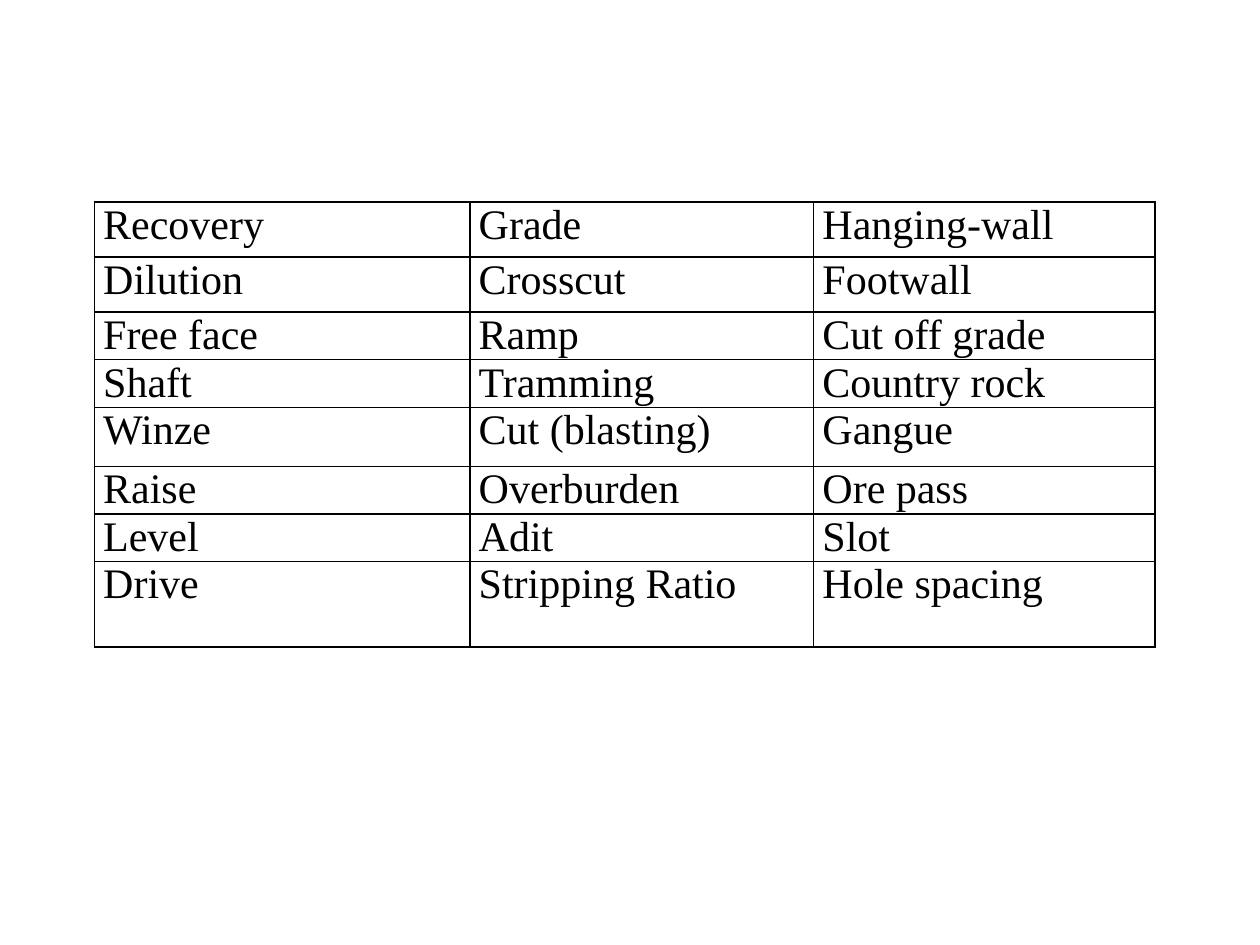
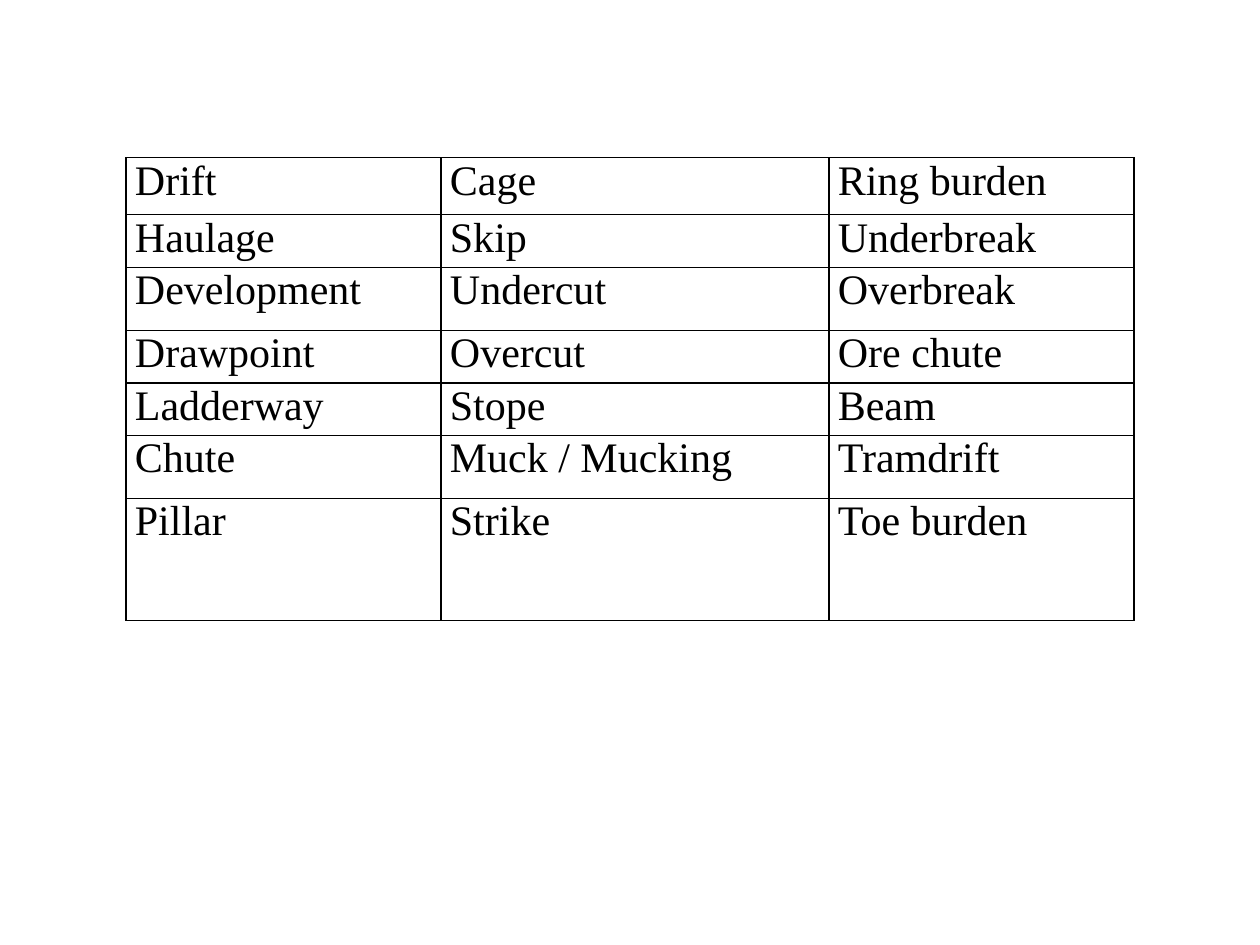
from lxml import etree
from pptx import Presentation
from pptx.dml.color import RGBColor
from pptx.oxml.ns import qn
from pptx.util import Cm, Pt

COLORS = {"ink": "000000", "paper": "FFFFFF"}
FONT = {"name": "Times New Roman", "size": Pt(24), "bold": False}
MARGINS = {"margin_left": Cm(0.18), "margin_right": Cm(0.18),
           "margin_top": 0, "margin_bottom": 0}
BORDER = Pt(1)
BLANK_LAYOUT = 6

MINING_TERMS = {
    "at": (1.9, 4.07),
    "widths": (7.57, 6.93, 6.88),
    "heights": (1.11, 1.11, 0.96, 0.96, 1.19, 0.96, 0.96, 1.72),
    "terms": [
        ("Recovery", "Grade", "Hanging-wall"),
        ("Dilution", "Crosscut", "Footwall"),
        ("Free face", "Ramp", "Cut off grade"),
        ("Shaft", "Tramming", "Country rock"),
        ("Winze", "Cut (blasting)", "Gangue"),
        ("Raise", "Overburden", "Ore pass"),
        ("Level", "Adit", "Slot"),
        ("Drive", "Stripping Ratio", "Hole spacing"),
    ],
}
STOPING_TERMS = {
    "at": (2.54, 3.18),
    "widths": (6.35, 7.82, 6.15),
    "heights": (1.15, 1.06, 1.27, 1.06, 1.06, 1.27, 2.46),
    "terms": [
        ("Drift", "Cage", "Ring burden"),
        ("Haulage", "Skip", "Underbreak"),
        ("Development", "Undercut", "Overbreak"),
        ("Drawpoint", "Overcut", "Ore chute"),
        ("Ladderway", "Stope", "Beam"),
        ("Chute", "Muck / Mucking", "Tramdrift"),
        ("Pillar", "Strike", "Toe burden"),
    ],
}


def set_attrs(obj, values):
    for name, value in values.items():
        setattr(obj, name, value)


def add_borders(cell):
    tc_pr = cell._tc.get_or_add_tcPr()
    for side in ("lnL", "lnR", "lnT", "lnB"):
        ln = etree.SubElement(tc_pr, qn(f"a:{side}"), w=str(BORDER))
        fill = etree.SubElement(ln, qn("a:solidFill"))
        etree.SubElement(fill, qn("a:srgbClr"), val=COLORS["ink"])


def fill_cell(cell, term):
    set_attrs(cell, MARGINS)
    add_borders(cell)
    cell.fill.background()
    r = cell.text_frame.paragraphs[0].add_run()
    r.text = term
    set_attrs(r.font, FONT)
    r.font.color.rgb = RGBColor.from_string(COLORS["ink"])


def add_term_table(slide, at, widths, heights, terms):
    left, top = map(Cm, at)
    table = slide.shapes.add_table(
        len(heights), len(widths), left, top,
        Cm(sum(widths)), Cm(sum(heights))).table
    set_attrs(table, {"first_row": False, "horz_banding": False})
    for column, width in zip(table.columns, widths):
        column.width = Cm(width)
    for row, height, row_terms in zip(table.rows, heights, terms):
        row.height = Cm(height)
        for cell, term in zip(row.cells, row_terms):
            fill_cell(cell, term)


def add_slide(prs):
    slide = prs.slides.add_slide(prs.slide_layouts[BLANK_LAYOUT])
    fill = slide.background.fill
    fill.solid()
    fill.fore_color.rgb = RGBColor.from_string(COLORS["paper"])
    return slide


def main():
    prs = Presentation()
    set_attrs(prs, {"slide_width": Cm(25.4), "slide_height": Cm(19.05)})
    for glossary in (MINING_TERMS, STOPING_TERMS):
        add_term_table(add_slide(prs), **glossary)
    prs.save("out.pptx")


if __name__ == "__main__":
    main()
